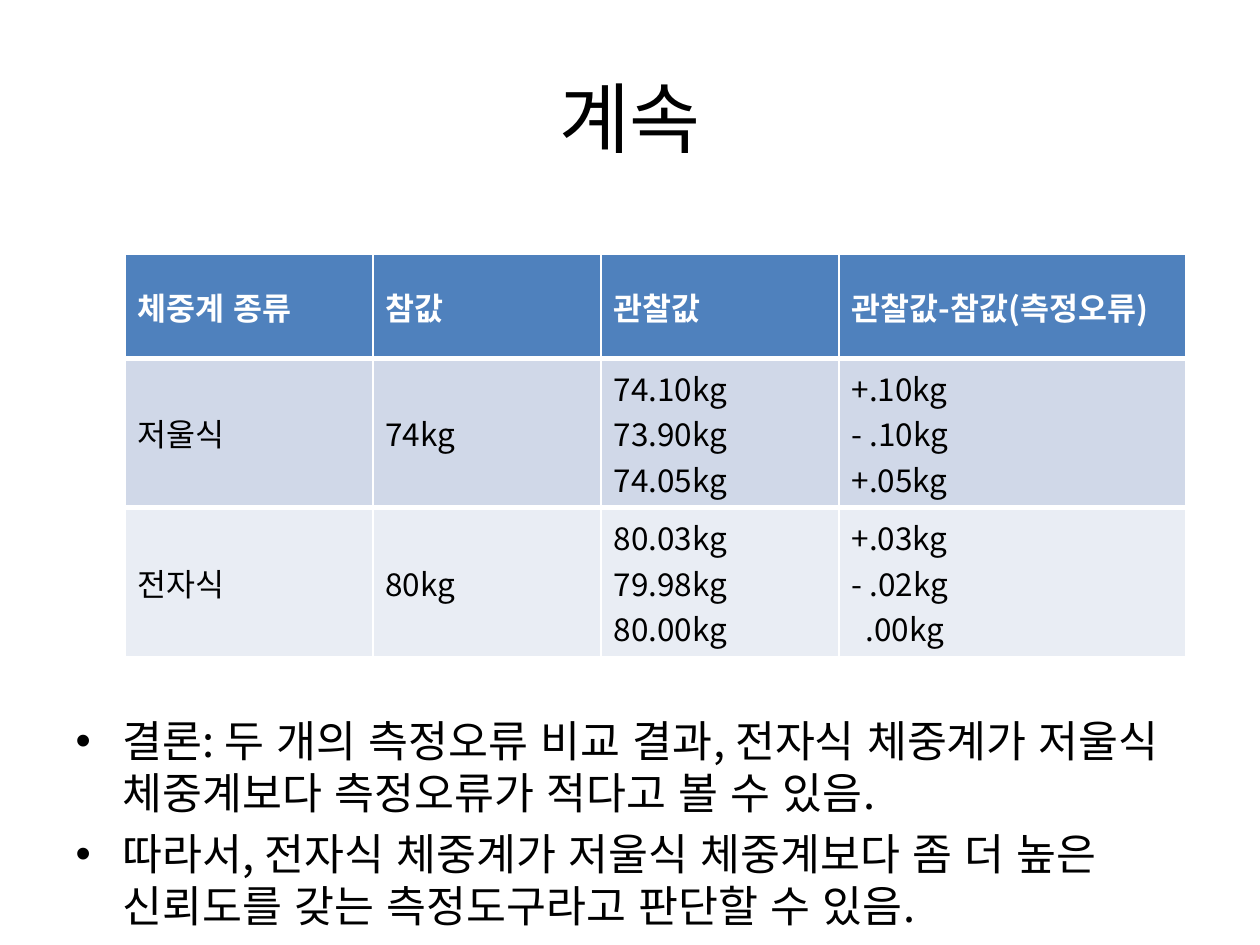
from lxml import etree
from pptx import Presentation
from pptx import util as u
from pptx.dml.color import RGBColor
from pptx.enum import lang, text
from pptx.oxml import ns

# Content
TITLE = "계속"
HEADER = ["체중계 종류", "참값", "관찰값", "관찰값-참값(측정오류)"]
SCALES = [
    ["저울식", "74kg", "74.10kg 73.90kg 74.05kg", "+.10kg\n- .10kg\n+.05kg"],
    ["전자식", "80kg", "80.03kg 79.98kg 80.00kg", "+.03kg\n- .02kg\n.00kg"],
]
CONCLUSIONS = [
    "결론: 두 개의 측정오류 비교 결과, 전자식 체중계가 저울식 체중계보다 측정오류가 적다고 볼 수 있음.",
    "따라서, 전자식 체중계가 저울식 체중계보다 좀 더 높은 신뢰도를 갖는 측정도구라고 판단할 수 있음.",
]

# Style
FONT = "Noto Sans CJK KR"
COLORS = {"text": "000000", "header text": "FFFFFF", "header": "4F81BD",
          "odd": "D0D8E8", "even": "E9EDF4", "border": "FFFFFF"}
COLUMNS = [1.97, 1.81, 1.89, 2.75]
ROWS = [0.82, 1.18, 1.18]


def place(shape, left, top, width, height):
    shape.left, shape.top = u.Inches(left), u.Inches(top)
    shape.width, shape.height = u.Inches(width), u.Inches(height)


def style(frame, size, color="text", bold=False):
    for para in frame.paragraphs:
        for span in para.runs:
            font = span.font
            font.name, font.size, font.bold = FONT, u.Pt(size), bold
            font.language_id = lang.MSO_LANGUAGE_ID.KOREAN
            font.color.rgb = RGBColor.from_string(COLORS[color])
            properties = span._r.get_or_add_rPr()
            properties.set("kern", "0")
            east_asian = etree.SubElement(properties, ns.qn("a:ea"))
            east_asian.set("typeface", FONT)


def add_border(cell, side, points):
    line = etree.Element(ns.qn(f"a:ln{side}"), w=str(u.Pt(points)))
    fill = etree.SubElement(line, ns.qn("a:solidFill"))
    etree.SubElement(fill, ns.qn("a:srgbClr"), val=COLORS["border"])
    cell._tc.get_or_add_tcPr().insert(0, line)


deck = Presentation()
deck.slide_width, deck.slide_height = u.Inches(10), u.Inches(7.5)
page = deck.slides.add_slide(deck.slide_layouts[1])

# Title
title = page.shapes.title
place(title, 0.5, 0.3, 9, 1.25)
title.text_frame.text = TITLE
style(title.text_frame, 44)

# Conclusions below the table
body = page.placeholders[1]
place(body, 0.5, 5.62, 9, 1.83)
body.text_frame.text = "\n".join(CONCLUSIONS)
body.text_frame.auto_size = text.MSO_AUTO_SIZE.NONE
style(body.text_frame, 24.8)

# Table of measurements
grid = [HEADER] + SCALES
table = page.shapes.add_table(
    len(ROWS), len(COLUMNS), u.Inches(0.99), u.Inches(2.02),
    u.Inches(sum(COLUMNS)), u.Inches(sum(ROWS))).table
for column, width in zip(table.columns, COLUMNS):
    column.width = u.Inches(width)
for row, height in zip(table.rows, ROWS):
    row.height = u.Inches(height)

for r, (values, fill) in enumerate(zip(grid, ["header", "odd", "even"])):
    for c, value in enumerate(values):
        cell = table.cell(r, c)
        cell.text_frame.text = value
        cell.vertical_anchor = text.MSO_ANCHOR.MIDDLE
        cell.fill.solid()
        cell.fill.fore_color.rgb = RGBColor.from_string(COLORS[fill])
        style(cell.text_frame, 18, "text" if r else "header text", bold=r == 0)
        if r < 2:
            add_border(cell, "T" if r else "B", 3)

# The unsigned error lines up with the signed ones
unsigned = table.cell(2, 3).text_frame.paragraphs[-1]
unsigned._p.get_or_add_pPr().set("marL", str(u.Inches(0.11)))

deck.save("out.pptx")
